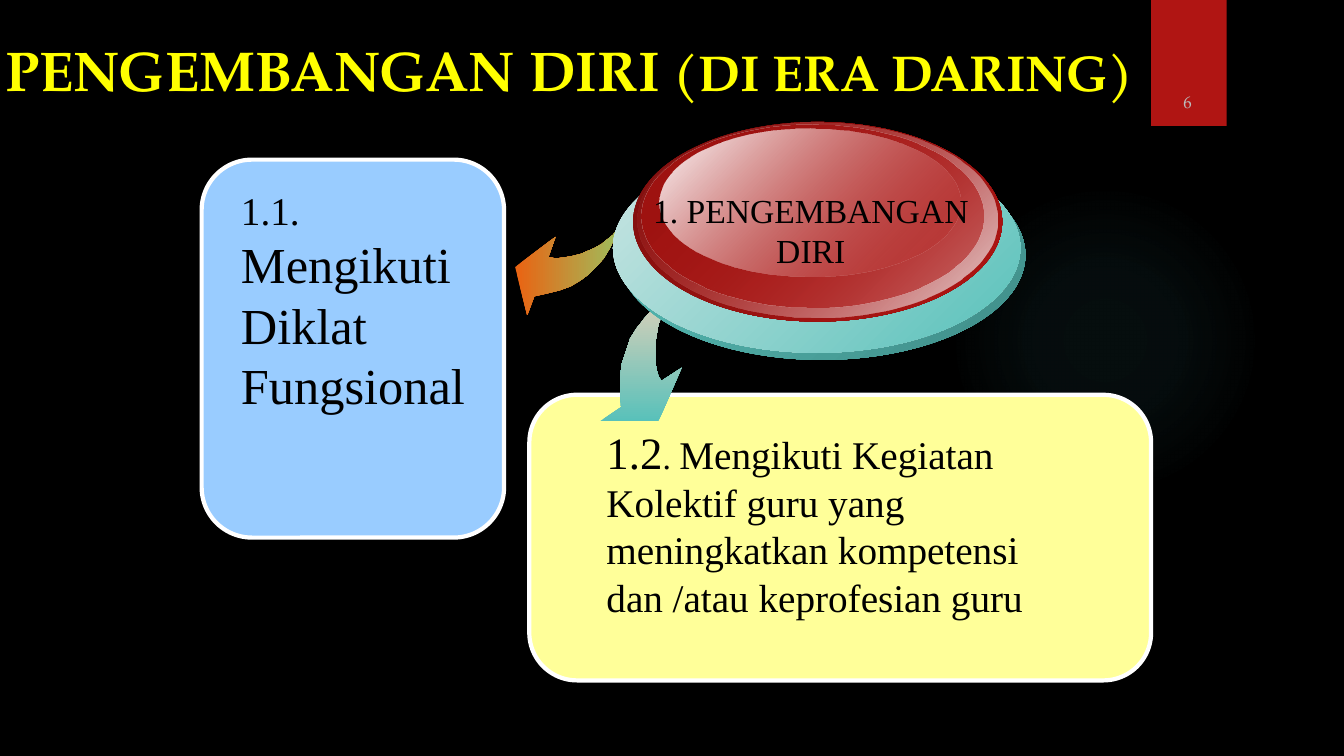
from lxml.etree import SubElement
from pptx import Presentation
from pptx.dml.color import RGBColor
from pptx.enum.shapes import MSO_SHAPE
from pptx.enum.text import MSO_ANCHOR, MSO_AUTO_SIZE, PP_ALIGN
from pptx.oxml.ns import qn
from pptx.util import Inches, Pt

theme = {
    "back": "000000", "red": "B01513", "white": "FFFFFF", "black": "000000",
    "blue": "99CCFF", "cream": "FFFF99", "title": "FFFF00", "gray": "BCBCBC",
    "teal": "58C1BA", "glow": "50B9C1", "sand": "E3D1B9", "rust": "EA6312",
    "leaf": "9EBE5D", "deep": "408D88", "mist": "CCE6E4", "wine": "7E0F0E",
    "rose": "E7D4D4", "brick": "9F1311",
    "serif": "Times New Roman", "head": "TeX Gyre Pagella",
    "huge": 40, "big": 36, "mid": 32, "text": 28, "small": 24, "tiny": 12,
}

deck = Presentation()
deck.slide_width, deck.slide_height = Inches(13.33), Inches(7.5)
slide = deck.slides.add_slide(deck.slide_layouts[5])
shapes = slide.shapes
slide.background.fill.solid()
slide.background.fill.fore_color.rgb = RGBColor.from_string(theme["back"])

# Grid of 90 rows; columns are as wide as rows are high
unit = deck.slide_height / 90


def blend(shape, stops, angle=None):
    """Gradient of (place, colour, opacity); a radial one without an angle."""
    shape.shadow.inherit = False
    shape.line.fill.background()
    shape.fill.gradient()
    grad = shape._element.spPr.find(qn("a:gradFill"))
    for child in list(grad):
        grad.remove(child)
    row = SubElement(grad, qn("a:gsLst"))
    for place, color, alpha in stops:
        stop = SubElement(row, qn("a:gs"), pos=str(place * 1000))
        tone = SubElement(stop, qn("a:srgbClr"), val=theme[color])
        SubElement(tone, qn("a:alpha"), val=str(alpha * 1000))
    if angle is None:
        ring = SubElement(grad, qn("a:path"), path="circle")
        SubElement(ring, qn("a:fillToRect"), l="50000", t="50000", r="50000", b="50000")
    else:
        SubElement(grad, qn("a:lin"), ang=str(angle * 60000), scaled="0")


def write(box, runs, face, color, look):
    """Fill a text box with one paragraph of (text, size) runs."""
    frame = box.text_frame
    form = {"word_wrap": True, "auto_size": MSO_AUTO_SIZE.NONE,
            "vertical_anchor": look.get("anchor", MSO_ANCHOR.TOP)}
    for key, value in form.items():
        setattr(frame, key, value)
    para = frame.paragraphs[0]
    para.alignment = look.get("align", PP_ALIGN.LEFT)
    for text, size in runs:
        run = para.add_run()
        run.text = text
        font = {"name": theme[face], "size": Pt(theme[size]), "bold": look.get("bold", False)}
        for key, value in font.items():
            setattr(run.font, key, value)
        run.font.color.rgb = RGBColor.from_string(theme[color])


# Soft glow at the right
glow = shapes.add_shape(MSO_SHAPE.OVAL, *[int(n * unit) for n in (113, 22, 37, 37)])
blend(glow, [(0, "glow", 7), (36, "glow", 6), (69, "glow", 0)])

# Page tab and the two cards
panels = [
    (MSO_SHAPE.RECTANGLE, (137, 0, 9, 15), "red", None),
    (MSO_SHAPE.ROUNDED_RECTANGLE, (63, 47, 74, 34), "cream", "white"),
    (MSO_SHAPE.ROUNDED_RECTANGLE, (24, 19, 36, 45), "blue", "white"),
]
for kind, spot, color, edge in panels:
    panel = shapes.add_shape(kind, *[int(n * unit) for n in spot])
    panel.shadow.inherit = False
    panel.fill.solid()
    panel.fill.fore_color.rgb = RGBColor.from_string(theme[color])
    if edge:
        panel.line.color.rgb = RGBColor.from_string(theme[edge])
        panel.line.width = Pt(3)
    else:
        panel.line.fill.background()

# Curved arrows, in hundredths of an inch, with colours and gradient angle
arrows = [
    ([(673, 288), (660, 296), (649, 305), (640, 315), (632, 325), (625, 336),
      (621, 348), (617, 360), (615, 374), (615, 388), (616, 404), (595, 418),
      (653, 418), (676, 365), (656, 378), (653, 373), (651, 366), (650, 358),
      (650, 340), (653, 322), (656, 314), (659, 305), (663, 298), (668, 292)],
     "teal", "sand", 270),
    ([(615, 222), (610, 235), (605, 246), (599, 256), (592, 264), (584, 272),
      (576, 278), (566, 284), (555, 288), (543, 291), (530, 294), (523, 313),
      (511, 265), (551, 235), (544, 255), (549, 256), (555, 256), (562, 255),
      (568, 254), (576, 252), (583, 249), (590, 246), (597, 242), (603, 237),
      (608, 233), (612, 228)],
     "rust", "leaf", 0),
]
for points, first, last, angle in arrows:
    curve = shapes.build_freeform(*points[0], scale=Inches(0.01))
    curve.add_line_segments(points[1:], close=True)
    blend(curve.convert_to_shape(), [(0, first, 100), (100, last, 100)], angle)

# Layered oval button
layers = [
    ((73.56, 17.88, 48.48, 24.96), "teal", 100, "deep", 100),
    ((72.96, 17.04, 48.48, 24.96), "mist", 100, "teal", 100),
    ((75.36, 14.52, 43.92, 23.76), "wine", 100, "red", 100),
    ((75.84, 14.64, 42.84, 23.16), "red", 0, "rose", 100),
    ((76.32, 14.88, 40.68, 21.72), "brick", 100, "red", 48),
    ((78.48, 15.36, 35.88, 17.52), "white", 100, "red", 38),
]
for spot, first, alpha, last, omega in layers:
    oval = shapes.add_shape(MSO_SHAPE.OVAL, *[int(n * unit) for n in spot])
    blend(oval, [(0, first, alpha), (100, last, omega)], 45)

# Title
title = shapes.title
spot = {"left": -0.6, "top": 2.25, "width": 148.7, "height": 12}
for key, value in spot.items():
    setattr(title, key, int(value * unit))
write(title, [("PENGEMBANGAN DIRI ", "huge"), ("(DI ERA DARING)", "big")],
      "head", "title", {"anchor": MSO_ANCHOR.MIDDLE, "bold": True})

# Labels
center = {"align": PP_ALIGN.CENTER}
labels = [
    ((135.84, 3.84, 11, 10.1), [("6", "tiny")], "head", "gray",
     {"anchor": MSO_ANCHOR.BOTTOM, **center}),
    ((76, 22, 41, 11), [("1. PENGEMBANGAN DIRI", "small")], "serif", "black", center),
    ((27.5, 21.6, 31.5, 28.5),
     [("1.1. ", "text"), ("Mengikuti Diklat Fungsional", "big")], "serif", "black", {}),
    ((71, 50, 62, 24.4),
     [("1.2", "mid"), (". ", "small"),
      ("Mengikuti Kegiatan Kolektif guru yang meningkatkan kompetensi "
       "dan /atau keprofesian guru", "text")], "serif", "black", {}),
]
for spot, runs, face, color, look in labels:
    box = shapes.add_textbox(*[int(n * unit) for n in spot])
    write(box, runs, face, color, look)

deck.save("out.pptx")
